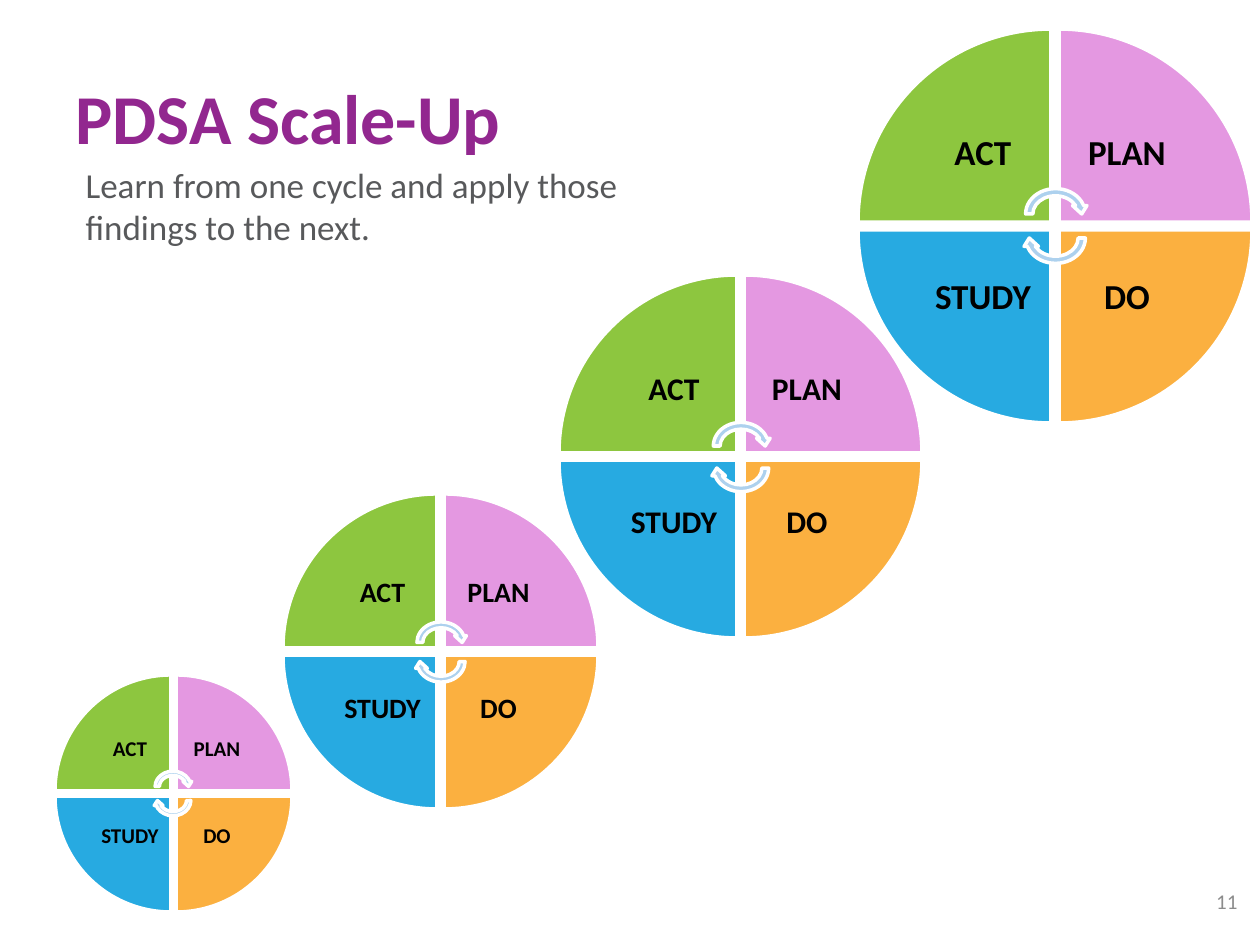
from dataclasses import dataclass

from lxml import etree
from pptx import Presentation
from pptx.dml.color import RGBColor
from pptx.enum.shapes import MSO_SHAPE
from pptx.enum.text import MSO_ANCHOR, MSO_AUTO_SIZE, PP_ALIGN
from pptx.oxml.ns import qn
from pptx.util import Pt

PIE_WEDGE = MSO_SHAPE.PIE_WEDGE
CIRCULAR_ARROW = MSO_SHAPE.CIRCULAR_ARROW
MIDDLE = MSO_ANCHOR.MIDDLE
TOP = MSO_ANCHOR.TOP
NO_AUTOFIT = MSO_AUTO_SIZE.NONE
LEFT = PP_ALIGN.LEFT
CENTER = PP_ALIGN.CENTER
RIGHT = PP_ALIGN.RIGHT
EMU_PER_PX = 914400 / 126


@dataclass(frozen=True)
class Theme:
    font: str = "Calibri"
    title: str = "92278F"
    body: str = "58595B"
    label: str = "000000"
    number: str = "8C8C8C"
    outline: str = "FFFFFF"
    arrow: str = "ADD1EE"
    act: str = "8DC63F"
    plan: str = "E498E1"
    do: str = "FBB040"
    study: str = "27AAE1"
    title_size: int = 40
    body_size: int = 20
    number_size: int = 12
    outline_width: int = 2


THEME = Theme()
STAGES = [
    ("ACT", THEME.act, 0, 0),
    ("PLAN", THEME.plan, 1, 0),
    ("DO", THEME.do, 1, 1),
    ("STUDY", THEME.study, 0, 1),
]
CYCLES = [
    (858, 29, 394, 20),
    (559, 275, 363, 18),
    (283, 494, 315, 16),
    (55, 675, 237, 12),
]


def px(length):
    return round(length * EMU_PER_PX)


def emu_box(box):
    return [px(round(length)) for length in box]


def place(shape, box):
    shape.left, shape.top, shape.width, shape.height = emu_box(box)


def write(shape, text, size, color, alignment, anchor, bold=False):
    frame = shape.text_frame
    frame.auto_size = NO_AUTOFIT
    frame.vertical_anchor = anchor
    paragraph = frame.paragraphs[0]
    paragraph.text = text
    paragraph.alignment = alignment
    paragraph.space_before = Pt(0)
    paragraph.font.name = THEME.font
    paragraph.font.size = Pt(size)
    paragraph.font.bold = bold
    paragraph.font.color.rgb = RGBColor.from_string(color)
    return frame


def add_outlined_shape(group, kind, box, color, rotation):
    shape = group.shapes.add_shape(kind, *emu_box(box))
    shape.rotation = rotation
    shape.shadow.inherit = False
    shape.fill.solid()
    shape.fill.fore_color.rgb = RGBColor.from_string(color)
    shape.line.color.rgb = RGBColor.from_string(THEME.outline)
    shape.line.width = Pt(THEME.outline_width)


def add_label(group, text, box, margin, size):
    label = group.shapes.add_textbox(*emu_box(box))
    frame = write(label, text, size, THEME.label, CENTER, MIDDLE, bold=True)
    frame.word_wrap = False
    frame.margin_left = frame.margin_right = px(margin)
    frame.margin_top = frame.margin_bottom = px(margin)
    frame.paragraphs[0].line_spacing = 0.9


def add_cycle(slide, left, top, size, label_size):
    group = slide.shapes.add_group_shape()
    wedge = round(size * 0.49)
    label = round(wedge / 2 ** 0.5)
    margin = round(size * 0.05)
    for index, (text, color, column, row) in enumerate(STAGES):
        wedge_left = left + column * (size - wedge)
        wedge_top = top + row * (size - wedge)
        add_outlined_shape(group, PIE_WEDGE, (wedge_left, wedge_top, wedge, wedge), color, index * 90)
        label_left = wedge_left + (1 - column) * (wedge - label)
        label_top = wedge_top + (1 - row) * (wedge - label)
        add_label(group, text, (label_left, label_top, label, label), margin, label_size)
    arrow_width = size * 0.17
    arrow_height = arrow_width * 0.87
    arrow_left = left + (size - arrow_width) / 2
    for center, rotation in ((0.47, 0), (0.53, 180)):
        arrow_top = top + size * center - arrow_height / 2
        box = (arrow_left, arrow_top, arrow_width, arrow_height)
        add_outlined_shape(group, CIRCULAR_ARROW, box, THEME.arrow, rotation)


def add_title(slide, box):
    title = slide.shapes.title
    place(title, box)
    write(title, "PDSA Scale-Up", THEME.title_size, THEME.title, LEFT, MIDDLE, bold=True)


def add_body(slide, box):
    body = slide.placeholders[1]
    place(body, box)
    properties = body.text_frame.paragraphs[0]._p.get_or_add_pPr()
    properties.set("marL", "0")
    properties.set("indent", "0")
    etree.SubElement(properties, qn("a:buNone"))
    text = "Learn from one cycle and apply those findings to the next."
    write(body, text, THEME.body_size, THEME.body, LEFT, TOP)


def add_slide_number(slide, box):
    number = slide.shapes.add_textbox(*emu_box(box))
    frame = write(number, "11", THEME.number_size, THEME.number, RIGHT, MIDDLE)
    frame.word_wrap = True


def main():
    presentation = Presentation()
    presentation.slide_width = px(1260)
    presentation.slide_height = px(945)
    slide = presentation.slides.add_slide(presentation.slide_layouts[1])
    add_title(slide, (63, 38, 683, 158))
    add_body(slide, (73, 157, 599, 325))
    for cycle in CYCLES:
        add_cycle(slide, *cycle)
    add_slide_number(slide, (1187, 876, 63, 50))
    presentation.save("out.pptx")


if __name__ == "__main__":
    main()
